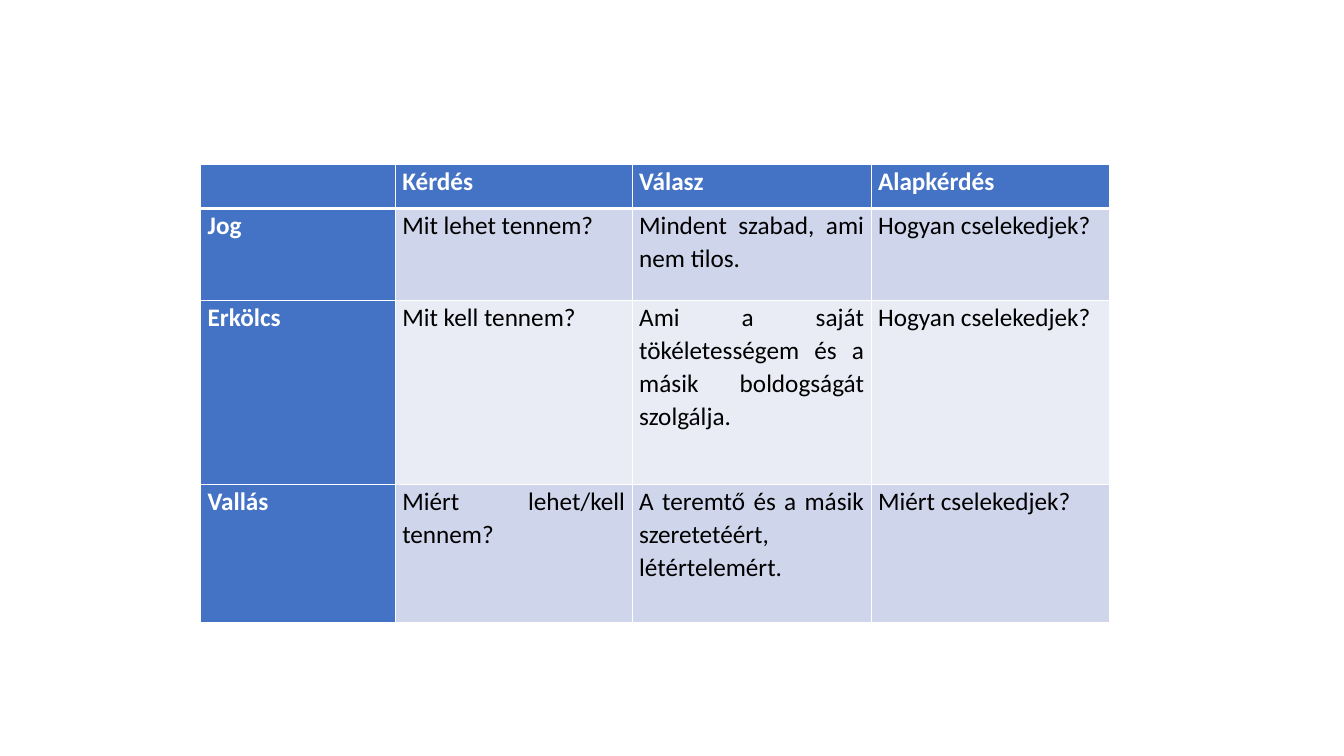
from lxml.etree import SubElement
from pptx import Presentation
from pptx.dml.color import RGBColor
from pptx.enum.text import PP_ALIGN
from pptx.oxml.ns import qn
from pptx.util import Inches, Pt

ROWS = [
    ("", "Kérdés", "Válasz", "Alapkérdés"),
    ("Jog", "Mit lehet tennem?", "Mindent szabad, ami nem tilos.", "Hogyan cselekedjek?"),
    ("Erkölcs", "Mit kell tennem?",
     "Ami a saját tökéletességem és a másik boldogságát szolgálja.", "Hogyan cselekedjek?"),
    ("Vallás", "Miért lehet/kell tennem?",
     "A teremtő és a másik szeretetéért, létértelemért.", "Miért cselekedjek?"),
]
LEFT, TOP = 1.99, 1.63
WIDTHS = [1.93, 2.35, 2.37, 2.37]
HEIGHTS = [0.44, 0.91, 1.83, 1.37]
HEADING, BANDS = "4472C4", ("E9EBF5", "CFD5EA")
WHITE, BLACK = "FFFFFF", "000000"


def color(value):
    return RGBColor.from_string(value)


def add_border(cell, side, width):
    ln = SubElement(cell._tc.get_or_add_tcPr(), qn("a:ln" + side), w=str(Pt(width)))
    fill = SubElement(ln, qn("a:solidFill"))
    SubElement(fill, qn("a:srgbClr"), val=WHITE)


def format_cell(cell, text, row, col):
    heading = row == 0 or col == 0
    for side in "LRTB":
        thick = (row, side) in ((0, "B"), (1, "T"))
        add_border(cell, side, 3 if thick else 1)
    cell.fill.solid()
    cell.fill.fore_color.rgb = color(HEADING if heading else BANDS[row % 2])
    cell.margin_left = cell.margin_right = Inches(0.07)
    cell.margin_top = cell.margin_bottom = 0
    if not text:
        return
    p = cell.text_frame.paragraphs[0]
    p.alignment = PP_ALIGN.JUSTIFY
    p.line_spacing = 1.07
    r = p.add_run()
    r.text = text
    r.font.name = "Calibri"
    r.font.size = Pt(18)
    r.font.bold = heading
    r.font.color.rgb = color(WHITE if heading else BLACK)


prs = Presentation()
prs.slide_width, prs.slide_height = Inches(13.33), Inches(7.5)
s = prs.slides.add_slide(prs.slide_layouts[6])
table = s.shapes.add_table(
    len(ROWS), len(WIDTHS), Inches(LEFT), Inches(TOP),
    Inches(sum(WIDTHS)), Inches(sum(HEIGHTS))).table
table.first_col = True
for column, width in zip(table.columns, WIDTHS):
    column.width = Inches(width)
for i, (height, texts) in enumerate(zip(HEIGHTS, ROWS)):
    table.rows[i].height = Inches(height)
    for j, text in enumerate(texts):
        format_cell(table.cell(i, j), text, i, j)

prs.save("out.pptx")
